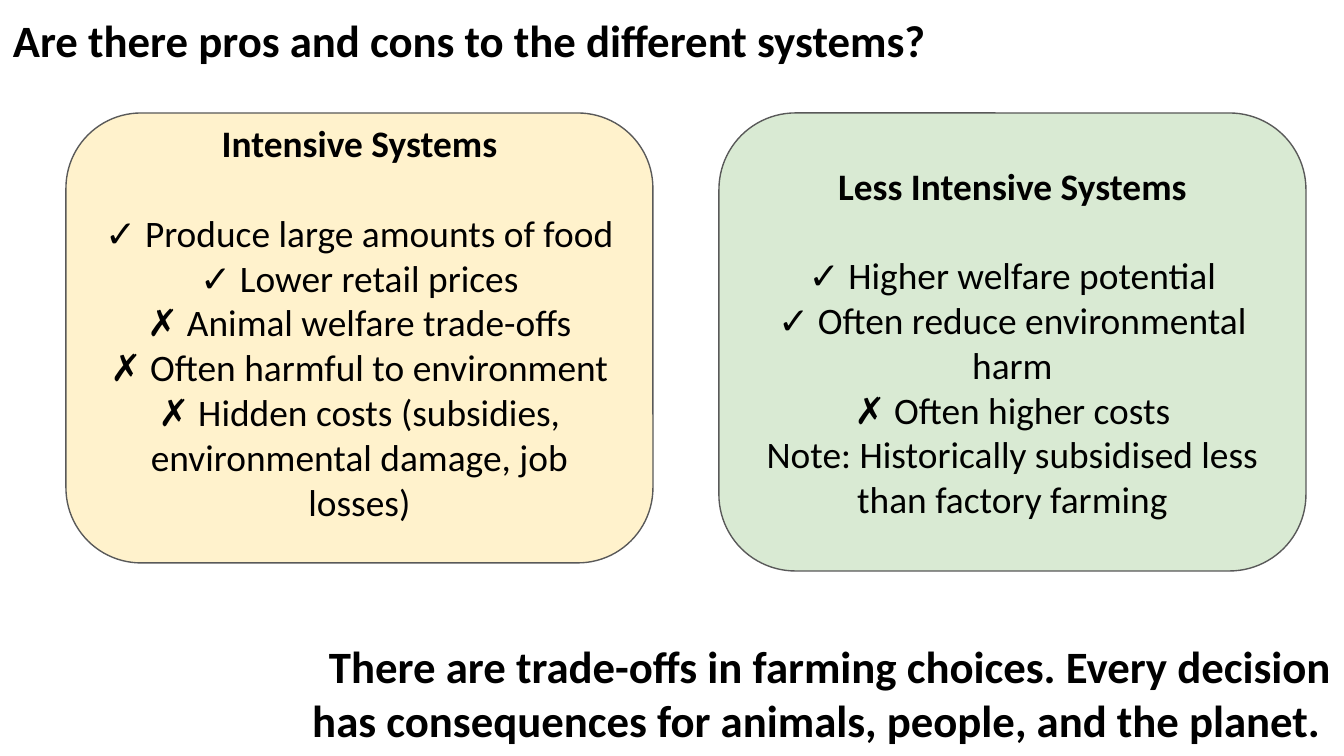
import pptx
import pptx.dml.color
import pptx.enum.shapes
import pptx.enum.text
import pptx.util

EMU_PER_PX = 914400 / 134.4
ALIGN = pptx.enum.text.PP_ALIGN
ANCHOR = pptx.enum.text.MSO_ANCHOR


def px(length):
    return pptx.util.Emu(round(length * EMU_PER_PX))


def color(hex_code):
    return pptx.dml.color.RGBColor.from_string(hex_code)


def apply(target, values):
    for name, value in values.items():
        setattr(target, name, value)


class SlideBuilder:
    font_name = "Calibri"
    text_color = "000000"
    line_color = "595959"
    inset = 13
    heading_size = 24
    card_size = 20

    def __init__(self, page):
        self.page = page

    def frame(self, shape, anchor, bottom_extra=0):
        """Set wrapping, anchor and insets of the text in a shape."""
        frame = shape.text_frame
        apply(frame, {
            "word_wrap": True,
            "vertical_anchor": anchor,
            "margin_left": px(self.inset),
            "margin_right": px(self.inset),
            "margin_top": px(self.inset),
            "margin_bottom": px(self.inset + bottom_extra),
        })
        return frame

    def add_text(self, para, text, size, bold, align):
        para.alignment = align
        span = para.add_run()
        span.text = text
        apply(span.font, {"name": self.font_name, "size": pptx.util.Pt(size), "bold": bold})
        span.font.color.rgb = color(self.text_color)

    def heading(self, area, text, align):
        box = self.page.shapes.add_textbox(*map(px, area))
        frame = self.frame(box, ANCHOR.TOP)
        self.add_text(frame.paragraphs[0], text, self.heading_size, True, align)

    def card(self, area, fill, title, points, bottom_extra=0):
        """Draw a rounded card with a bold title above its points."""
        box = self.page.shapes.add_shape(
            pptx.enum.shapes.MSO_SHAPE.ROUNDED_RECTANGLE, *map(px, area))
        box.adjustments[0] = 0.167
        box.shadow.inherit = False
        box.fill.solid()
        box.fill.fore_color.rgb = color(fill)
        box.line.color.rgb = color(self.line_color)
        box.line.width = pptx.util.Pt(0.75)
        frame = self.frame(box, ANCHOR.MIDDLE, bottom_extra)
        self.add_text(frame.paragraphs[0], title, self.card_size, True, ALIGN.CENTER)
        for index, point in enumerate(points):
            para = frame.add_paragraph()
            if index == 0:
                para.space_before = pptx.util.Pt(24)
            self.add_text(para, point, self.card_size, False, ALIGN.CENTER)


def main():
    deck = pptx.Presentation()
    apply(deck, {"slide_width": px(1344), "slide_height": px(756)})
    builder = SlideBuilder(deck.slides.add_slide(deck.slide_layouts[6]))

    builder.heading((0, 0, 1001, 113),
                    "Are there pros and cons to the different systems?", ALIGN.LEFT)
    builder.card((719, 113, 587, 458), "D9EAD3", "Less Intensive Systems", [
        "✓ Higher welfare potential",
        "✓ Often reduce environmental harm",
        "✗ Often higher costs",
        "Note: Historically subsidised less than factory farming",
    ])
    builder.card((66, 113, 587, 450), "FFF2CC", "Intensive Systems", [
        "✓ Produce large amounts of food",
        "✓ Lower retail prices",
        "✗ Animal welfare trade-offs",
        "✗ Often harmful to environment",
        "✗ Hidden costs (subsidies, environmental damage, job losses)",
    ], bottom_extra=32)
    builder.heading((265, 626, 1079, 136),
                    "There are trade-offs in farming choices. Every decision has "
                    "consequences for animals, people, and the planet. ", ALIGN.RIGHT)
    deck.save("out.pptx")


if __name__ == "__main__":
    main()
